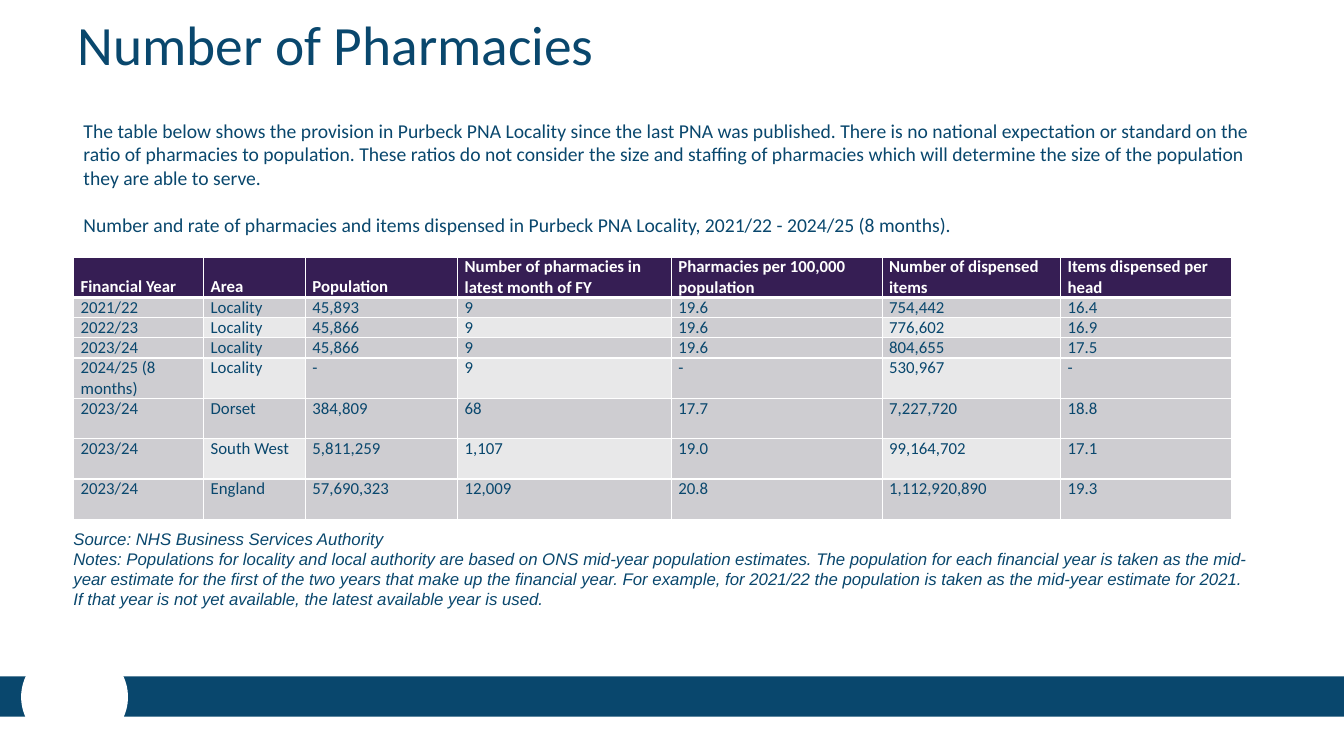
from lxml import etree
from pptx import Presentation
from pptx import util as u
from pptx.dml.color import RGBColor
from pptx.enum import shapes, text
from pptx.oxml import ns

NAVY, PURPLE, WHITE = "09476D", "361E54", "FFFFFF"
GREY, LIGHT_GREY = "CECDD1", "E8E8E9"

INTRO = [
    "The table below shows the provision in Purbeck PNA Locality since the last PNA was published. "
    "There is no national expectation or standard on the ratio of pharmacies to population. "
    "These ratios do not consider the size and staffing of pharmacies which will determine "
    "the size of the population they are able to serve.",
    "Number and rate of pharmacies and items dispensed in Purbeck PNA Locality, "
    "2021/22 - 2024/25 (8 months).",
]
NOTES = [
    "Source: NHS Business Services Authority",
    "Notes: Populations for locality and local authority are based on ONS mid-year population "
    "estimates. The population for each financial year is taken as the mid-year estimate for the "
    "first of the two years that make up the financial year. For example, for 2021/22 the "
    "population is taken as the mid-year estimate for 2021. If that year is not yet available, "
    "the latest available year is used.",
]
PHARMACY_ROWS = [
    ["Financial Year", "Area", "Population", "Number of pharmacies in latest month of FY",
     "Pharmacies per 100,000 population", "Number of dispensed items", "Items dispensed per head"],
    ["2021/22", "Locality", "45,893", "9", "19.6", "754,442", "16.4"],
    ["2022/23", "Locality", "45,866", "9", "19.6", "776,602", "16.9"],
    ["2023/24", "Locality", "45,866", "9", "19.6", "804,655", "17.5"],
    ["2024/25 (8 months)", "Locality", "-", "9", "-", "530,967", "-"],
    ["2023/24", "Dorset", "384,809", "68", "17.7", "7,227,720", "18.8"],
    ["2023/24", "South West", "5,811,259", "1,107", "19.0", "99,164,702", "17.1"],
    ["2023/24", "England", "57,690,323", "12,009", "20.8", "1,112,920,890", "19.3"],
]
COLUMN_WIDTHS = [1.29, 1.01, 1.51, 2.12, 2.09, 1.77, 1.7]
ROW_HEIGHTS = [0.4, 0.2, 0.2, 0.2, 0.4, 0.4, 0.4, 0.4]


def set_fill(target, colour):
    target.fill.solid()
    target.fill.fore_color.rgb = RGBColor.from_string(colour)


def format_font(paragraph, size, colour, name="Calibri", bold=False, italic=False):
    for run in paragraph.runs:
        font = run.font
        font.name, font.size = name, u.Pt(size)
        font.bold, font.italic = bold, italic
        font.color.rgb = RGBColor.from_string(colour)


def add_plain_shape(slide, kind, box, colour):
    shape = slide.shapes.add_shape(kind, *map(u.Inches, box))
    shape.shadow.inherit = False
    set_fill(shape, colour)
    shape.line.fill.background()


def add_text(slide, box, lines, size, gap=0, line_spacing=1.0, **font):
    """Add a text box with one paragraph per line, gap points apart."""
    frame = slide.shapes.add_textbox(*map(u.Inches, box)).text_frame
    frame.word_wrap = True
    frame.vertical_anchor = text.MSO_ANCHOR.MIDDLE
    frame.text = "\n".join(lines)
    for index, paragraph in enumerate(frame.paragraphs):
        paragraph.line_spacing = line_spacing
        if index and gap:
            paragraph.space_before = u.Pt(gap)
        format_font(paragraph, size, NAVY, **font)


def set_borders(cell, widths):
    """Draw white borders; widths gives points by side (L, R, T, B)."""
    properties = cell._tc.get_or_add_tcPr()
    for side, width in widths.items():
        line = etree.SubElement(properties, ns.qn(f"a:ln{side}"), w=str(u.Pt(width)))
        fill = etree.SubElement(line, ns.qn("a:solidFill"))
        etree.SubElement(fill, ns.qn("a:srgbClr"), val=WHITE)


def format_cell(cell, row, column):
    is_header = row == 0
    set_borders(cell, {"L": 1, "R": 1, "T": 3 if row == 1 else 1, "B": 3 if is_header else 1})
    is_light = row % 2 == 0 and column % 2 == 1
    set_fill(cell, PURPLE if is_header else LIGHT_GREY if is_light else GREY)
    cell.margin_left = cell.margin_right = u.Inches(0.07)
    cell.margin_top = cell.margin_bottom = 0
    cell.vertical_anchor = text.MSO_ANCHOR.BOTTOM if is_header else text.MSO_ANCHOR.TOP
    format_font(cell.text_frame.paragraphs[0], 12, WHITE if is_header else NAVY, bold=is_header)


def add_pharmacy_table(slide, box):
    table = slide.shapes.add_table(
        len(PHARMACY_ROWS), len(COLUMN_WIDTHS), *map(u.Inches, box)).table
    for column, width in zip(table.columns, COLUMN_WIDTHS):
        column.width = u.Inches(width)
    for row, height in zip(table.rows, ROW_HEIGHTS):
        row.height = u.Inches(height)
    for row, values in enumerate(PHARMACY_ROWS):
        for column, value in enumerate(values):
            cell = table.cell(row, column)
            cell.text = value
            format_cell(cell, row, column)


def main():
    presentation = Presentation()
    presentation.slide_width = u.Inches(13.33)
    presentation.slide_height = u.Inches(7.5)
    slide = presentation.slides.add_slide(presentation.slide_layouts[6])

    add_plain_shape(slide, shapes.MSO_SHAPE.RECTANGLE, (0, 6.71, 13.33, 0.4), NAVY)
    add_plain_shape(slide, shapes.MSO_SHAPE.OVAL, (0.21, 6.41, 1.06, 1.01), WHITE)
    add_text(slide, (0.73, 1.12, 11.87, 1.28), INTRO, 14, gap=17)
    add_text(slide, (0.63, 5.19, 11.87, 0.91), NOTES, 12, name="Arial", italic=True)
    add_text(slide, (0.67, 0.12, 8.5, 0.71), ["Number of Pharmacies"], 39.6, line_spacing=0.9)
    add_pharmacy_table(slide, (0.73, 2.55, 11.5, 2.6))
    presentation.save("out.pptx")


if __name__ == "__main__":
    main()
